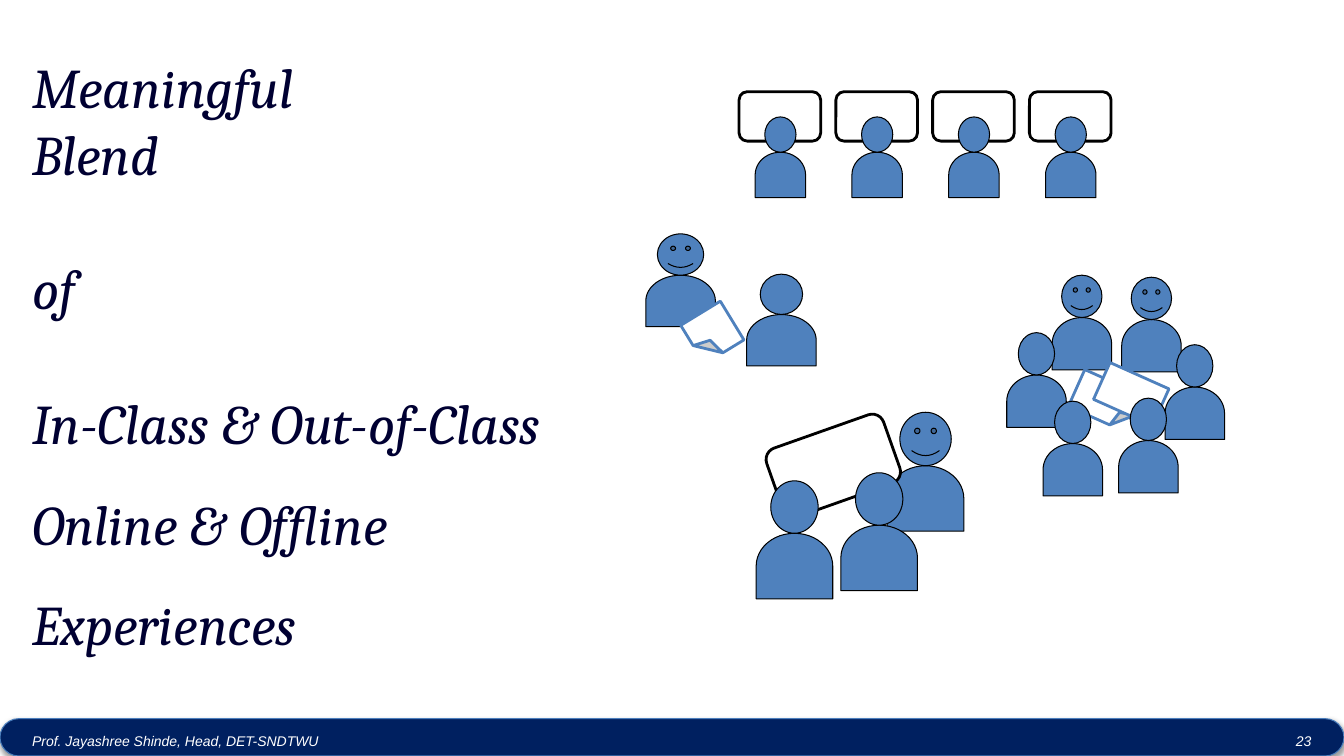
"""Build a slide on blending in-class and out-of-class learning experiences."""
from lxml import etree
from pptx import Presentation
from pptx.dml.color import RGBColor
from pptx.enum.shapes import MSO_SHAPE
from pptx.enum.text import MSO_ANCHOR, PP_ALIGN
from pptx.oxml.ns import qn
from pptx.util import Inches, Pt

ROUNDED = MSO_SHAPE.ROUNDED_RECTANGLE
PAPER = MSO_SHAPE.FOLDED_CORNER
TORSO = MSO_SHAPE.FLOWCHART_DELAY
PLAIN = MSO_SHAPE.OVAL
SMILING = MSO_SHAPE.SMILEY_FACE
TOP, MIDDLE = MSO_ANCHOR.TOP, MSO_ANCHOR.MIDDLE
LEFT, CENTER = PP_ALIGN.LEFT, PP_ALIGN.CENTER

THEME = {
    "person": "4F81BD", "ink": "000000", "white": "FFFFFF",
    "bar": "002060", "bar_line": "4B7EBC", "headline": "000032",
    "headline_font": "Cambria", "footer_font": "Arial",
    "headline_size": 40, "footer_size": 10,
    "thin": 0.75, "thick": 2,
}

HEADLINE = [
    ("Meaningful", 0), ("Blend", 0), ("of", 48),
    ("In-Class & Out-of-Class", 48), ("Online & Offline", 24), ("Experiences", 24),
]
HEADLINE_BOX = (0.22, 0.47, 6.41, 6.16)
FOOTERS = [
    ("Prof. Jayashree Shinde, Head, DET-SNDTWU", (0.22, 7.2, 10.51, 0.3), LEFT),
    ("23", (12.64, 7.2, 0.58, 0.3), CENTER),
]
BAR_BOX = (0, 7.13, 13.33, 0.37)

LEARNER_COUNT, LEARNER_PITCH = 4, 0.96
SCREEN_BOX = (7.33, 0.91, 0.81, 0.49)
LEARNER_CENTER, LEARNER_TOP = 7.74, 1.16
LEARNER_SIZE = (0.31, 0.35, 0.5, 0.45)

TUTOR_SIZE = (0.51, 0.53, 0.76, 0.65)
TRIO_SIZE = (0.47, 0.52, 0.76, 0.65)
PAIR_TEACHER_SIZE = (0.46, 0.41, 0.69, 0.51)
PAIR_SIZE = (0.42, 0.4, 0.69, 0.51)
HOST_SIZE = (0.4, 0.42, 0.59, 0.52)
TEAM_SIZE = (0.36, 0.42, 0.59, 0.52)

SCENES = [
    ("person", SMILING, 9.18, 4.09, TUTOR_SIZE),
    ("board", (7.65, 4.26, 1.23, 0.72), 340.5),
    ("person", PLAIN, 7.88, 4.77, TRIO_SIZE),
    ("person", PLAIN, 8.72, 4.69, TRIO_SIZE),
    ("person", SMILING, 6.75, 2.32, PAIR_TEACHER_SIZE),
    ("paper", (6.84, 3.07, 0.45, 0.46), 58.6),
    ("person", PLAIN, 7.75, 2.72, PAIR_SIZE),
    ("person", SMILING, 11.42, 2.75, HOST_SIZE),
    ("person", PLAIN, 11.85, 3.42, TEAM_SIZE),
    ("person", SMILING, 10.73, 2.73, HOST_SIZE),
    ("person", PLAIN, 10.28, 3.3, TEAM_SIZE),
    ("paper", (10.65, 3.78, 0.64, 0.4), 24.1),
    ("paper", (10.9, 3.71, 0.64, 0.4), 24.1),
    ("person", PLAIN, 11.39, 3.95, TEAM_SIZE),
    ("person", PLAIN, 10.64, 3.98, TEAM_SIZE),
]


def color(key):
    return RGBColor.from_string(THEME[key])


def add_figure(slide, kind, box, fill, line, weight, rotation=0):
    figure = slide.shapes.add_shape(kind, *map(Inches, box))
    figure.shadow.inherit = False
    figure.fill.solid()
    figure.fill.fore_color.rgb = color(fill)
    figure.line.color.rgb = color(line)
    figure.line.width = Pt(THEME[weight])
    figure.rotation = rotation
    return figure


def add_person(slide, head, center, top, size):
    head_w, head_h, torso_w, torso_h = size
    torso_middle = top + head_h + torso_h / 2
    torso_box = (center - torso_h / 2, torso_middle - torso_w / 2, torso_h, torso_w)
    head_box = (center - head_w / 2, top, head_w, head_h)
    add_figure(slide, TORSO, torso_box, "person", "ink", "thin", 270)
    add_figure(slide, head, head_box, "person", "ink", "thin")


def add_board(slide, box, rotation=0):
    add_figure(slide, ROUNDED, box, "white", "ink", "thick", rotation)


def add_paper(slide, box, rotation):
    paper = add_figure(slide, PAPER, box, "white", "person", "thick", rotation)
    geometry = paper.element.spPr.find(qn("a:prstGeom"))
    fold = geometry.find(qn("a:avLst"))
    etree.SubElement(fold, qn("a:gd"), name="adj", fmla="val 47600")


def add_bar(slide):
    bar = add_figure(slide, ROUNDED, BAR_BOX, "bar", "bar_line", "thin")
    bar.adjustments[0] = 0.5
    effects = bar.element.spPr.find(qn("a:effectLst"))
    shadow = etree.SubElement(
        effects, qn("a:outerShdw"), blurRad=str(Pt(3.1)), dist=str(Pt(1.6)),
        dir="5400000", rotWithShape="0")
    shade = etree.SubElement(shadow, qn("a:srgbClr"), val=THEME["ink"])
    etree.SubElement(shade, qn("a:alpha"), val="38000")


def add_text(slide, lines, box, role, ink, anchor, align=LEFT):
    frame = slide.shapes.add_textbox(*map(Inches, box)).text_frame
    frame.word_wrap = True
    frame.vertical_anchor = anchor
    frame.text = "\n".join(words for words, _ in lines)
    for paragraph, (_, gap) in zip(frame.paragraphs, lines):
        paragraph.alignment = align
        paragraph.space_before = Pt(gap)
        for run in paragraph.runs:
            run.font.name = THEME[role + "_font"]
            run.font.size = Pt(THEME[role + "_size"])
            run.font.italic = True
            run.font.color.rgb = color(ink)


def main():
    deck = Presentation()
    deck.slide_width, deck.slide_height = Inches(13.33), Inches(7.5)
    slide = deck.slides.add_slide(deck.slide_layouts[6])
    add_bar(slide)

    builders = {"person": add_person, "board": add_board, "paper": add_paper}
    for part, *details in SCENES:
        builders[part](slide, *details)

    screen_left, *screen_rest = SCREEN_BOX
    for index in range(LEARNER_COUNT):
        shift = index * LEARNER_PITCH
        add_board(slide, (screen_left + shift, *screen_rest))
        add_person(slide, PLAIN, LEARNER_CENTER + shift, LEARNER_TOP, LEARNER_SIZE)

    for words, box, align in FOOTERS:
        add_text(slide, [(words, 0)], box, "footer", "white", MIDDLE, align)
    add_text(slide, HEADLINE, HEADLINE_BOX, "headline", "headline", TOP)
    deck.save("out.pptx")


if __name__ == "__main__":
    main()
